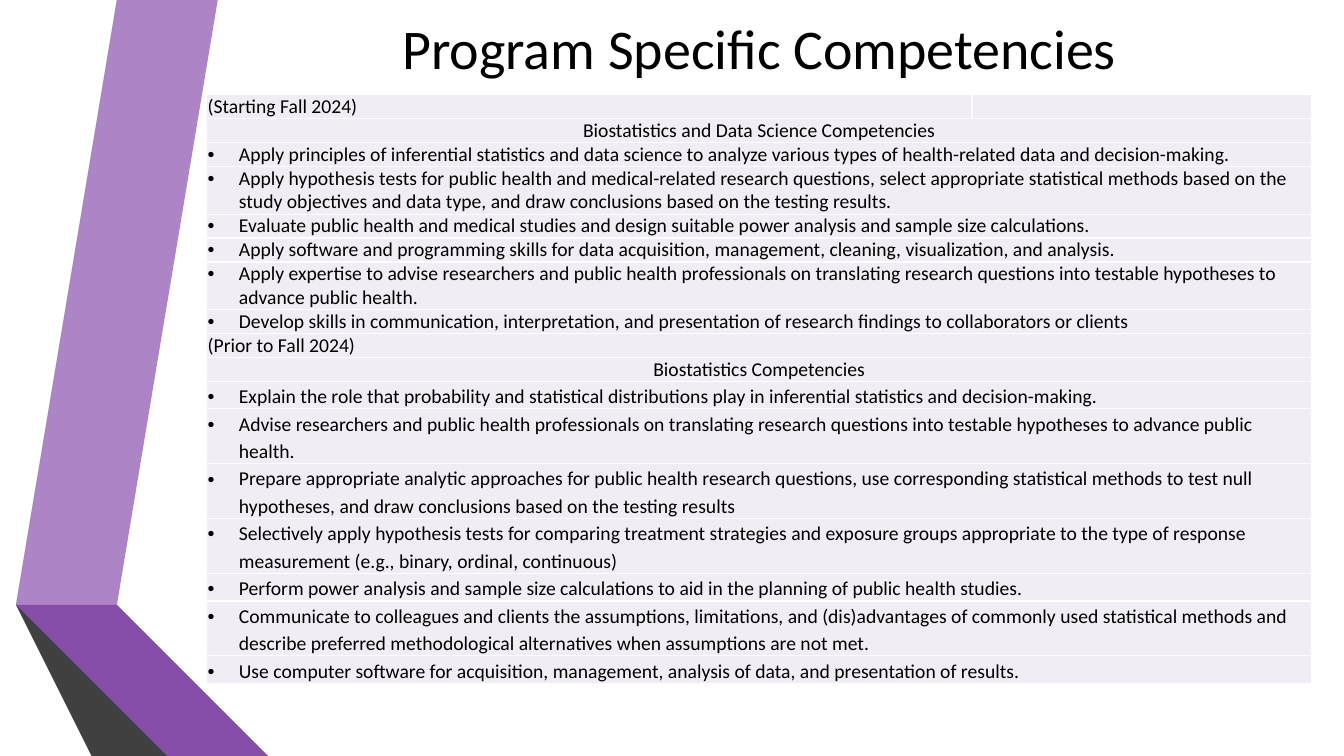
from dataclasses import dataclass

from lxml import etree
from pptx import Presentation
from pptx.dml.color import RGBColor
from pptx.enum import text
from pptx.oxml import ns
from pptx.util import Inches, Pt


@dataclass(frozen=True)
class Theme:
    font: str = "Calibri"
    ink: str = "000000"
    cell: str = "F1EDF5"
    border: str = "FFFFFF"
    lilac: str = "AD84C6"
    purple: str = "874EA9"
    deep_purple: str = "5A3471"
    gray: str = "595959"
    dark_gray: str = "404040"
    near_black: str = "262626"
    title_size: int = 40
    body_size: int = 14


THEME = Theme()

# Points are measured in inches from the top left corner of the ribbon's box.
RIBBON_PARTS = [
    (THEME.lilac, [(0.34, 5.78), (0.61, 5.83), (1.57, 0), (1.29, 0)]),
    (THEME.gray, [(1.23, 0), (0.95, 0), (0, 5.73), (0.28, 5.77)]),
    (THEME.near_black, [(0, 5.73), (1.29, 7.5), (1.35, 7.5)]),
    (THEME.deep_purple, [(0.34, 5.79), (1.92, 7.5), (1.98, 7.5)]),
    (THEME.purple, [(0.34, 5.79), (1.98, 7.5), (2.67, 7.5), (0.61, 5.83), (0.34, 5.78)]),
    (THEME.dark_gray, [(1.86, 7.5), (0.32, 5.83), (0.28, 5.77), (0, 5.73), (1.35, 7.5)]),
]

# Period, heading, line spacing, competencies
PROGRAMS = [
    ("(Starting Fall 2024)", "Biostatistics and Data Science Competencies", 1.0, [
        "Apply principles of inferential statistics and data science to analyze various types of "
        "health-related data and decision-making.",
        "Apply hypothesis tests for public health and medical-related research questions, select "
        "appropriate statistical methods based on the study objectives and data type, and draw "
        "conclusions based on the testing results.",
        "Evaluate public health and medical studies and design suitable power analysis and sample "
        "size calculations.",
        "Apply software and programming skills for data acquisition, management, cleaning, "
        "visualization, and analysis.",
        "Apply expertise to advise researchers and public health professionals on translating "
        "research questions into testable hypotheses to advance public health.",
        "Develop skills in communication, interpretation, and presentation of research findings "
        "to collaborators or clients",
    ]),
    ("(Prior to Fall 2024)", "Biostatistics Competencies", 1.15, [
        "Explain the role that probability and statistical distributions play in inferential "
        "statistics and decision-making.",
        "Advise researchers and public health professionals on translating research questions "
        "into testable hypotheses to advance public health.",
        "Prepare appropriate analytic approaches for public health research questions, use "
        "corresponding statistical methods to test null hypotheses, and draw conclusions based "
        "on the testing results",
        "Selectively apply hypothesis tests for comparing treatment strategies and exposure "
        "groups appropriate to the type of response measurement (e.g., binary, ordinal, continuous)",
        "Perform power analysis and sample size calculations to aid in the planning of public "
        "health studies.",
        "Communicate to colleagues and clients the assumptions, limitations, and (dis)advantages "
        "of commonly used statistical methods and describe preferred methodological alternatives "
        "when assumptions are not met.",
        "Use computer software for acquisition, management, analysis of data, and presentation "
        "of results.",
    ]),
]


def add_run(paragraph, words, size):
    run = paragraph.add_run()
    run.text = words
    run.font.name = THEME.font
    run.font.size = Pt(size)
    run.font.color.rgb = RGBColor.from_string(THEME.ink)


def add_ribbon(slide, left, top):
    ribbon = slide.shapes.add_group_shape()
    for color, points in RIBBON_PARTS:
        builder = ribbon.shapes.build_freeform(*points[0], scale=Inches(1))
        builder.add_line_segments(points[1:], close=True)
        shape = builder.convert_to_shape(left, top)
        shape.shadow.inherit = False
        shape.fill.solid()
        shape.fill.fore_color.rgb = RGBColor.from_string(color)
        shape.line.fill.background()


def format_title(slide, left, top, width, height):
    title = slide.shapes.title
    title.left, title.top, title.width, title.height = left, top, width, height
    title.text_frame.vertical_anchor = text.MSO_ANCHOR.MIDDLE
    paragraph = title.text_frame.paragraphs[0]
    paragraph.alignment = text.PP_ALIGN.CENTER
    add_run(paragraph, "Program Specific Competencies", THEME.title_size)


def format_cell(cell):
    cell.margin_left = cell.margin_right = Inches(0.01)
    cell.margin_top = cell.margin_bottom = 0
    properties = cell._tc.get_or_add_tcPr()
    for side in ("lnL", "lnR", "lnT", "lnB"):
        line = etree.SubElement(properties, ns.qn(f"a:{side}"), w=str(Pt(1)))
        fill = etree.SubElement(line, ns.qn("a:solidFill"))
        etree.SubElement(fill, ns.qn("a:srgbClr"), val=THEME.border)
    cell.fill.solid()
    cell.fill.fore_color.rgb = RGBColor.from_string(THEME.cell)


def add_bullet(paragraph):
    properties = paragraph._p.get_or_add_pPr()
    properties.set("marL", str(Inches(0.31)))
    properties.set("indent", str(-Inches(0.31)))
    etree.SubElement(properties, ns.qn("a:buFont"), typeface="Arial")
    etree.SubElement(properties, ns.qn("a:buChar"), char="•")


def competency_rows():
    """List each row as its words, kind and line spacing."""
    rows = []
    for period, heading, spacing, competencies in PROGRAMS:
        rows += [(period, "period", 1.0), (heading, "heading", 1.0)]
        rows += [(words, "competency", spacing) for words in competencies]
    return rows


def add_competency_table(slide, left, top, width):
    rows = competency_rows()
    line_height = Inches(0.23)
    frame = slide.shapes.add_table(len(rows), 2, left, top, width, line_height * len(rows))
    table = frame.table
    table.first_row = table.horz_banding = False
    table.columns[0].width = Inches(7.59)
    table.columns[1].width = width - Inches(7.59)
    for index, (words, kind, spacing) in enumerate(rows):
        table.rows[index].height = line_height
        for cell in table.rows[index].cells:
            format_cell(cell)
            end = etree.SubElement(cell.text_frame.paragraphs[0]._p, ns.qn("a:endParaRPr"))
            end.set("sz", str(THEME.body_size * 100))
        cell = table.cell(index, 0)
        if index > 0:
            cell.merge(table.cell(index, 1))
        paragraph = cell.text_frame.paragraphs[0]
        paragraph.line_spacing = spacing
        if kind == "heading":
            paragraph.alignment = text.PP_ALIGN.CENTER
        elif kind == "competency":
            add_bullet(paragraph)
        add_run(paragraph, words, THEME.body_size)


def main():
    presentation = Presentation()
    presentation.slide_width, presentation.slide_height = Inches(13.33), Inches(7.5)
    slide = presentation.slides.add_slide(presentation.slide_layouts.get_by_name("Title Only"))
    left, width, title_height = Inches(2.05), Inches(10.96), Inches(0.94)
    add_ribbon(slide, Inches(0.16), 0)
    format_title(slide, left, 0, width, title_height)
    add_competency_table(slide, left, title_height, width)
    presentation.save("out.pptx")


if __name__ == "__main__":
    main()
